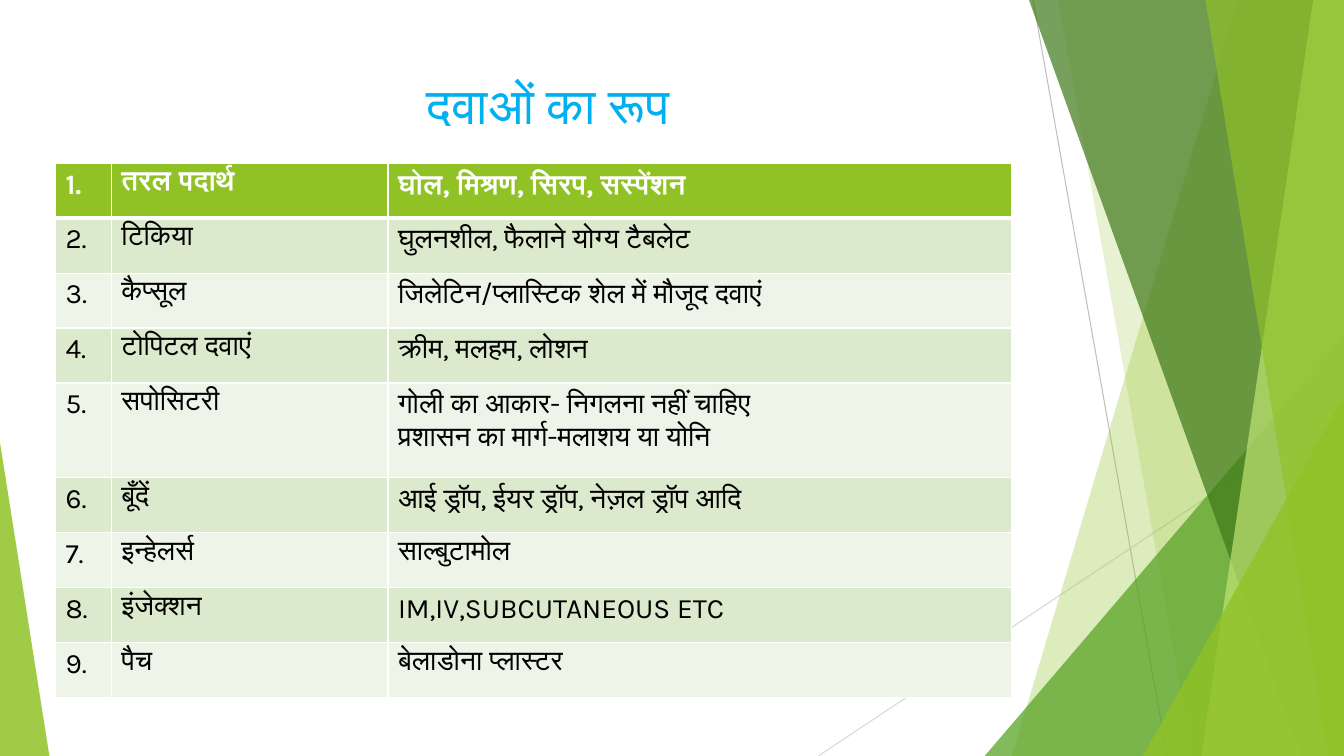
from dataclasses import dataclass

from lxml import etree
from pptx import Presentation
from pptx.dml.color import RGBColor
from pptx.enum.shapes import MSO_CONNECTOR as Connector, MSO_SHAPE as Preset
from pptx.enum.text import MSO_ANCHOR as Anchor, PP_ALIGN as Align
from pptx.oxml.ns import qn
from pptx.util import Emu, Pt

SCALE = 4572  # EMU per px, 200 px to the inch
WIDTH, HEIGHT = 2667, 1500

COLORS = {
    "white": "FFFFFF", "black": "000000", "title": "00B0F0",
    "lime": "90C226", "green": "54A021", "forest": "3F7819", "pale": "C0E474",
    "band": "DBE9CD", "light band": "EEF4E8",
    "gray": "BFBFBF", "light gray": "D9D9D9",
}


@dataclass
class Ray:
    start: tuple[int, int]
    end: tuple[int, int]
    color: str


@dataclass
class Shard:
    """A band running from the top edge to the bottom edge, up to the right side."""
    top: int
    bottom: int
    color: str
    opacity: int


@dataclass
class Corner:
    """A right triangle standing on the bottom edge, with its peak at one side."""
    left: int
    width: int
    height: int
    peak: int
    color: str
    opacity: int


RAYS = [
    Ray((2050, 0), (2316, HEIGHT), "gray"),
    Ray((WIDTH, 806), (1624, HEIGHT), "light gray"),
]
FACETS = [
    Shard(2456, 2008, "lime", 30),
    Shard(2100, 2366, "lime", 20),
    Corner(1954, 713, 834, 1, "green", 72),
    Shard(2042, 2582, "forest", 70),
    Shard(2606, 2384, "pale", 70),
    Shard(2392, 2636, "lime", 65),
    Corner(2268, 399, 714, 1, "lime", 80),
    Corner(0, 98, 622, 0, "lime", 85),
]

COLUMNS = [111, 549, 1238]
ROW_HEIGHT, TALL_ROW_HEIGHT = 109, 188
MEDICINES = [
    ("तरल पदार्थ", "घोल, मिश्रण, सिरप, सस्पेंशन"),
    ("टिकिया", "घुलनशील, फैलाने योग्य टैबलेट"),
    ("कैप्सूल", "जिलेटिन/प्लास्टिक शेल में मौजूद दवाएं"),
    ("टोपिटल दवाएं", "क्रीम, मलहम, लोशन"),
    ("सपोसिटरी", "गोली का आकार- निगलना नहीं चाहिए\nप्रशासन का मार्ग-मलाशय या योनि"),
    ("बूँदें", "आई ड्रॉप, ईयर ड्रॉप, नेज़ल ड्रॉप आदि"),
    ("इन्हेलर्स", "साल्बुटामोल"),
    ("इंजेक्शन", "IM,IV,SUBCUTANEOUS ETC"),
    ("पैच", "बेलाडोना प्लास्टर"),
]


def px(length: int) -> Emu:
    return Emu(length * SCALE)


def rgb(name: str) -> RGBColor:
    return RGBColor.from_string(COLORS[name])


def write(frame, text: str, *, font: str, size: int, color: str,
          bold: bool = False, align: Align = Align.LEFT) -> None:
    para = frame.paragraphs[0]
    para.text = text.replace("\n", "\v")
    para.alignment = align
    for span in para.runs:
        span.font.name = font
        span.font.size = Pt(size)
        span.font.bold = bold
        span.font.color.rgb = rgb(color)


def draw_ray(page, ray: Ray) -> None:
    line = page.shapes.add_connector(
        Connector.STRAIGHT, *map(px, ray.start), *map(px, ray.end))
    line.line.color.rgb = rgb(ray.color)
    line.line.width = Pt(0.75)
    etree.SubElement(line._element.spPr, qn("a:effectLst"))


def draw_facet(page, facet: Shard | Corner) -> None:
    if isinstance(facet, Shard):
        builder = page.shapes.build_freeform(facet.top, 0, scale=SCALE)
        builder.add_line_segments(
            [(WIDTH, 0), (WIDTH, HEIGHT), (facet.bottom, HEIGHT)], close=True)
        shape = builder.convert_to_shape()
    else:
        shape = page.shapes.add_shape(
            Preset.ISOSCELES_TRIANGLE, px(facet.left), px(HEIGHT - facet.height),
            px(facet.width), px(facet.height))
        shape.adjustments[0] = facet.peak
    shape.shadow.inherit = False
    shape.line.fill.background()
    shape.fill.solid()
    shape.fill.fore_color.rgb = rgb(facet.color)
    tint = shape._element.spPr.find(f"{qn('a:solidFill')}/{qn('a:srgbClr')}")
    etree.SubElement(tint, qn("a:alpha"), val=str(facet.opacity * 1000))


def set_borders(cell, *, top: int, bottom: int) -> None:
    """Draw white borders, with top and bottom widths in points."""
    properties = cell._tc.get_or_add_tcPr()
    widths = {"lnL": 1, "lnR": 1, "lnT": top, "lnB": bottom}
    for index, (side, width) in enumerate(widths.items()):
        border = etree.Element(qn(f"a:{side}"), w=str(Pt(width)))
        fill = etree.SubElement(border, qn("a:solidFill"))
        etree.SubElement(fill, qn("a:srgbClr"), val=COLORS["white"])
        properties.insert(index, border)


def draw_title(page) -> None:
    box = page.shapes.add_textbox(px(148), px(134), px(1880), px(146))
    box.text_frame.word_wrap = True
    box.text_frame.vertical_anchor = Anchor.MIDDLE
    write(box.text_frame, "दवाओं का रूप", font="Montserrat", size=36,
          color="title", align=Align.CENTER)


def draw_table(page) -> None:
    heights = [TALL_ROW_HEIGHT if "\n" in detail else ROW_HEIGHT
               for _, detail in MEDICINES]
    table = page.shapes.add_table(
        len(MEDICINES), len(COLUMNS), px(110), px(324),
        px(sum(COLUMNS)), px(sum(heights))).table
    for column, width in zip(table.columns, COLUMNS):
        column.width = px(width)
    for index, (medicine, height) in enumerate(zip(MEDICINES, heights)):
        table.rows[index].height = px(height)
        header = index == 0
        band = "lime" if header else ("light band", "band")[index % 2]
        for cell, text in zip(table.rows[index].cells, (f"{index + 1}.", *medicine)):
            cell.fill.solid()
            cell.fill.fore_color.rgb = rgb(band)
            set_borders(cell, top=3 if index == 1 else 1, bottom=3 if header else 1)
            write(cell.text_frame, text, font="Karla", size=20,
                  color="white" if header else "black", bold=header)


def main() -> None:
    deck = Presentation()
    deck.slide_width, deck.slide_height = px(WIDTH), px(HEIGHT)
    page = deck.slides.add_slide(deck.slide_layouts[6])
    for ray in RAYS:
        draw_ray(page, ray)
    for facet in FACETS:
        draw_facet(page, facet)
    draw_title(page)
    draw_table(page)
    deck.save("out.pptx")


if __name__ == "__main__":
    main()
